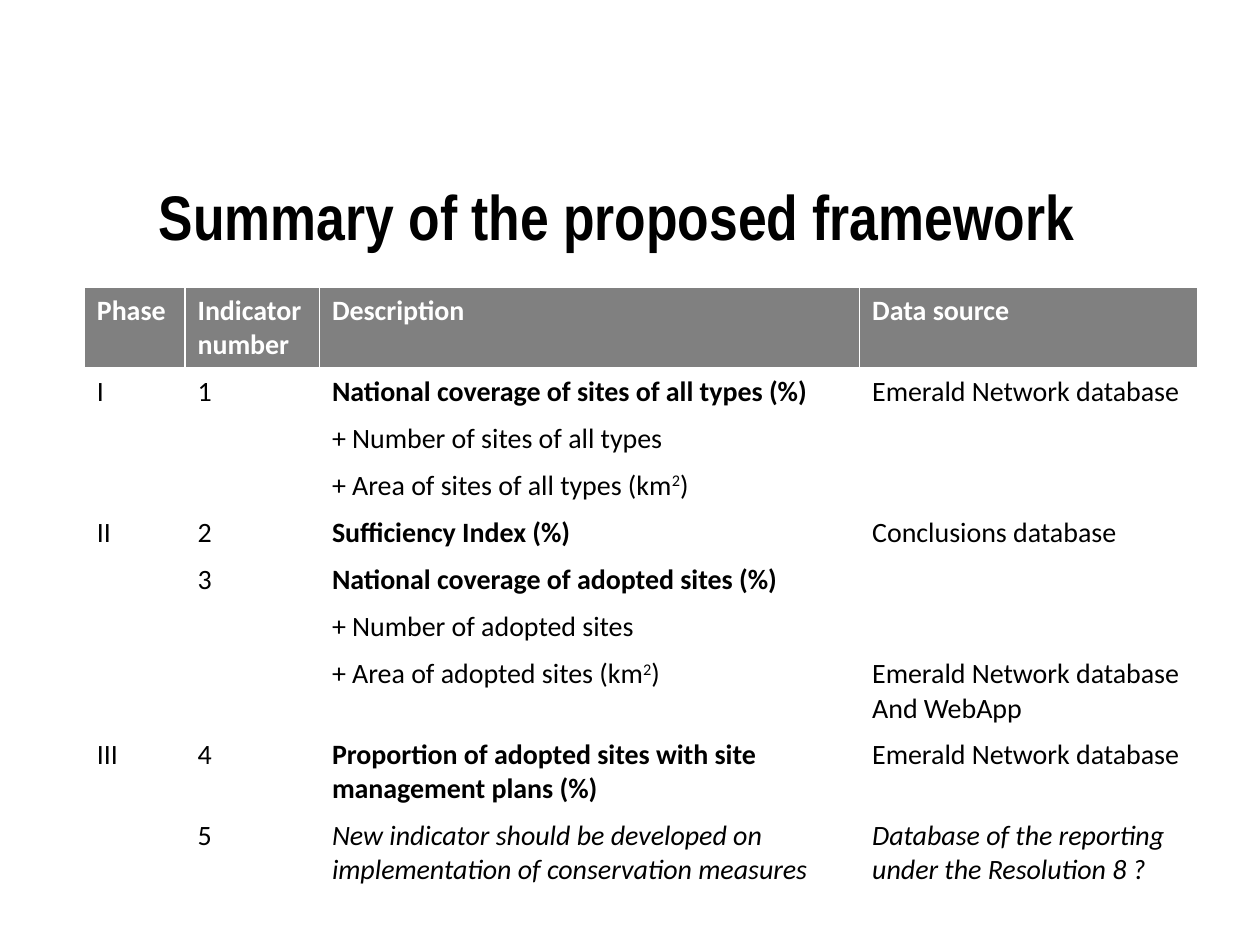
from dataclasses import dataclass

from pptx import Presentation
from pptx.dml.color import RGBColor
from pptx.enum import text
from pptx.util import Cm, Pt

TITLE = "Summary of the proposed framework"
HEADER = ("Phase", "Indicator number", "Description", "Data source")
# Each row: style of the description, style of the source, number of lines, cells; "^" raises the next character.
ROWS = [
    ("bold", "plain", 1, ("I", "1", "National coverage of sites of all types (%)", "Emerald Network database")),
    ("plain", "plain", 1, ("", "", "+ Number of sites of all types", "")),
    ("plain", "plain", 1, ("", "", "+ Area of sites of all types (km^2)", "")),
    ("bold", "plain", 1, ("II", "2", "Sufficiency Index (%)", "Conclusions database")),
    ("bold", "plain", 1, ("", "3", "National coverage of adopted sites (%)", "")),
    ("plain", "plain", 1, ("", "", "+ Number of adopted sites", "")),
    ("plain", "plain", 2, ("", "", "+ Area of adopted sites (km^2)", "Emerald Network database\nAnd WebApp")),
    ("bold", "plain", 2, ("III", "4", "Proportion of adopted sites with site management plans (%)",
                          "Emerald Network database")),
    ("italic", "italic", 2, ("", "5", "New indicator should be developed on implementation of conservation measures",
                             "Database of the reporting under the Resolution 8 ?")),
]
COLUMN_WIDTHS = (2.03, 2.71, 10.89, 6.81)
LINE_HEIGHTS = {1: 0.95, 2: 1.63}


@dataclass(frozen=True)
class Theme:
    title_font: str = "Arial Narrow"
    body_font: str = "Calibri"
    title_size: int = 36
    body_size: int = 16
    ink: str = "000000"
    header_ink: str = "FFFFFF"
    header_fill: str = "808080"


THEME = Theme()


def style_span(span, font, size, color, style):
    span.font.name = font
    span.font.size = Pt(size)
    span.font.color.rgb = RGBColor.from_string(color)
    span.font.bold = style == "bold"
    span.font.italic = style == "italic"


def write_line(para, line, color, style):
    if not line:
        para._p.get_or_add_endParaRPr().set("sz", str(THEME.body_size * 100))
        return
    before, _, raised = line.partition("^")
    for content, baseline in ((before, 0), (raised[:1], 30000), (raised[1:], 0)):
        if content:
            span = para.add_run()
            span.text = content
            style_span(span, THEME.body_font, THEME.body_size, color, style)
            if baseline:
                span.font._element.set("baseline", str(baseline))


def write_cell(cell, content, color, style, fill=None):
    if fill:
        cell.fill.solid()
        cell.fill.fore_color.rgb = RGBColor.from_string(fill)
    else:
        cell.fill.background()
    frame = cell.text_frame
    for index, line in enumerate(content.split("\n")):
        para = frame.add_paragraph() if index else frame.paragraphs[0]
        write_line(para, line, color, style)


def add_title(page):
    box = page.shapes.add_textbox(Cm(0.33), Cm(3.53), Cm(24.21), Cm(1.83))
    frame = box.text_frame
    frame.word_wrap = True
    frame.vertical_anchor = text.MSO_ANCHOR.MIDDLE
    frame.text = TITLE
    para = frame.paragraphs[0]
    para.alignment = text.PP_ALIGN.CENTER
    para.line_spacing = 0.9
    para.space_after = Pt(12)
    style_span(para.runs[0], THEME.title_font, THEME.title_size, THEME.ink, "bold")


def add_framework(page):
    heights = [LINE_HEIGHTS[2]] + [LINE_HEIGHTS[lines] for _, _, lines, _ in ROWS]
    table = page.shapes.add_table(
        len(heights), len(HEADER), Cm(1.7), Cm(5.79), Cm(sum(COLUMN_WIDTHS)), Cm(sum(heights))
    ).table
    table.first_row = False
    table.horz_banding = False
    for column, width in zip(table.columns, COLUMN_WIDTHS):
        column.width = Cm(width)
    for row, height in zip(table.rows, heights):
        row.height = Cm(height)
    for column, label in enumerate(HEADER):
        write_cell(table.cell(0, column), label, THEME.header_ink, "bold", THEME.header_fill)
    for index, (description, source, _, cells) in enumerate(ROWS, 1):
        styles = ("plain", "plain", description, source)
        for column, (content, style) in enumerate(zip(cells, styles)):
            write_cell(table.cell(index, column), content, THEME.ink, style)


def main():
    deck = Presentation()
    deck.slide_width, deck.slide_height = Cm(25.4), Cm(19.05)
    page = deck.slides.add_slide(deck.slide_layouts[6])
    add_title(page)
    add_framework(page)
    deck.save("out.pptx")


if __name__ == "__main__":
    main()
